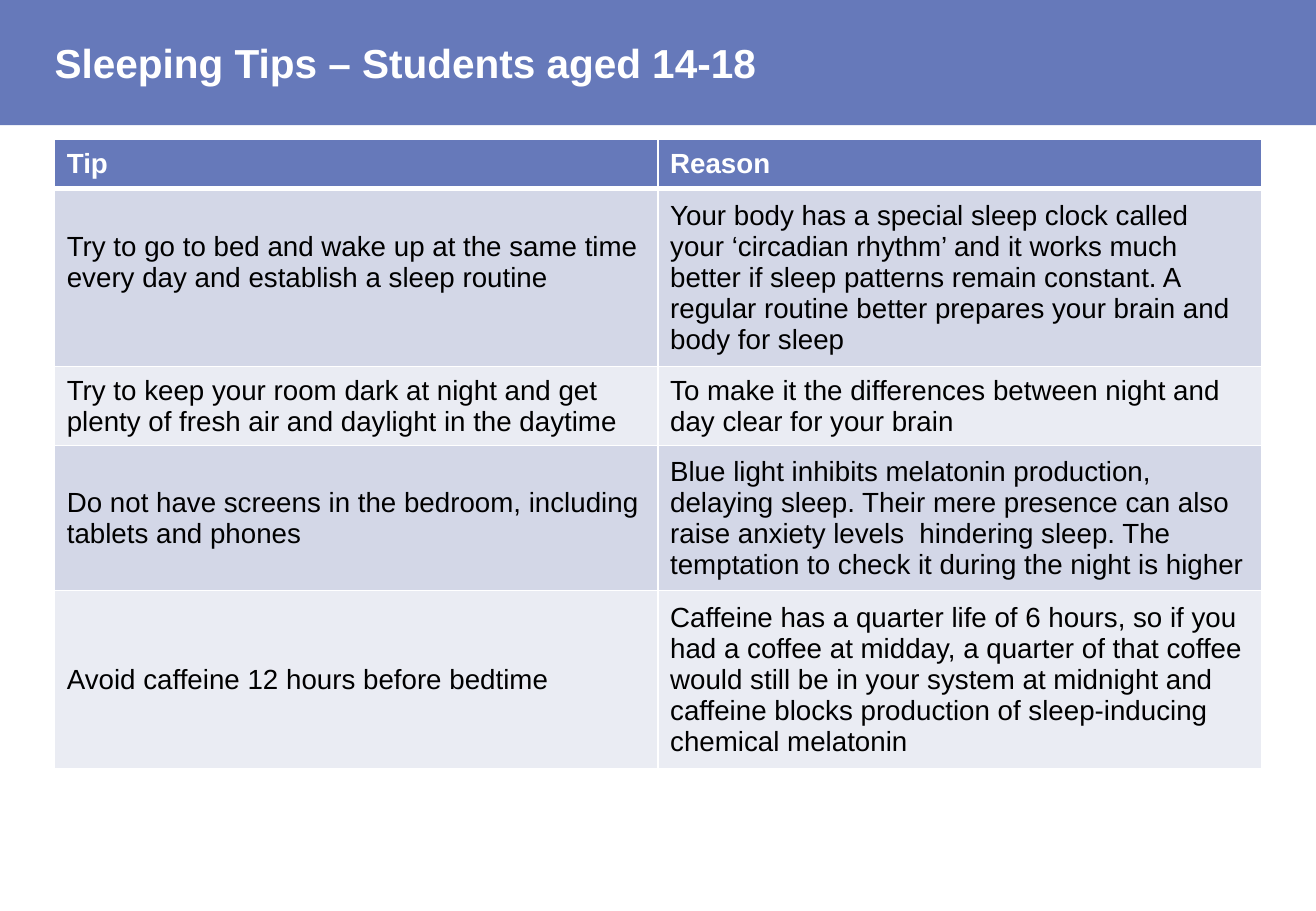
from dataclasses import dataclass

from lxml import etree
from pptx import Presentation
from pptx import util as u
from pptx.dml.color import RGBColor
from pptx.enum import shapes, text
from pptx.oxml.ns import qn


@dataclass(frozen=True)
class Theme:
    font: str = "Arial"
    title: float = 24
    body: float = 16.4
    blue: str = "6679BA"
    white: str = "FFFFFF"
    ink: str = "000000"
    bands: tuple = ("D3D7E7", "EAECF3")
    rule: float = 1
    heavy: float = 3


T = Theme()
WIDE, HIGH = 10.83, 7.5
EDGE = 0.45
SPAN = WIDE - 2 * EDGE
BAR = 1.03
TOP = 1.15
ROWS = (0.4, 1.37, 0.62, 1.19, 1.37)
PAD, LIFT = 0.05, 0.3

TIPS = [
    ("Tip", "Reason"),
    ("Try to go to bed and wake up at the same time every day and establish a sleep routine",
     "Your body has a special sleep clock called your ‘circadian rhythm’ and it works much "
     "better if sleep patterns remain constant. A regular routine better prepares your brain "
     "and body for sleep"),
    ("Try to keep your room dark at night and get plenty of fresh air and daylight in the daytime",
     "To make it the differences between night and day clear for your brain"),
    ("Do not have screens in the bedroom, including tablets and phones",
     "Blue light inhibits melatonin production, delaying sleep. Their mere presence can also "
     "raise anxiety levels  hindering sleep. The temptation to check it during the night is higher"),
    ("Avoid caffeine 12 hours before bedtime",
     "Caffeine has a quarter life of 6 hours, so if you had a coffee at midday, a quarter of "
     "that coffee would still be in your system at midnight and caffeine blocks production of "
     "sleep-inducing chemical melatonin"),
]


def paint(item, color):
    item.fill.solid()
    item.fill.fore_color.rgb = RGBColor.from_string(color)


def write(frame, words, size=T.body, color=T.ink, bold=False):
    frame.word_wrap = True
    para = frame.paragraphs[0]
    para.alignment = text.PP_ALIGN.LEFT
    run = para.add_run()
    run.text = words
    font = run.font
    font.name, font.size, font.bold = T.font, u.Pt(size), bold
    font.color.rgb = RGBColor.from_string(color)


def border(cell, top, bottom):
    props = cell._tc.get_or_add_tcPr()
    sides = {"lnL": T.rule, "lnR": T.rule, "lnT": top, "lnB": bottom}
    for spot, (side, width) in enumerate(sides.items()):
        line = etree.Element(qn(f"a:{side}"), w=str(u.Pt(width)))
        fill = etree.SubElement(line, qn("a:solidFill"))
        etree.SubElement(fill, qn("a:srgbClr"), val=T.white)
        props.insert(spot, line)


def add_bar(slide):
    bar = slide.shapes.add_shape(
        shapes.MSO_SHAPE.RECTANGLE, 0, 0, u.Inches(WIDE), u.Inches(BAR))
    paint(bar, T.blue)
    bar.line.fill.background()
    bar.shadow.inherit = False


def add_title(slide, words):
    box = slide.shapes.add_textbox(
        u.Inches(EDGE), u.Inches(0.12), u.Inches(SPAN), u.Inches(0.79))
    frame = box.text_frame
    frame.margin_left = frame.margin_right = frame.margin_top = frame.margin_bottom = 0
    frame.vertical_anchor = text.MSO_ANCHOR.MIDDLE
    write(frame, words, size=T.title, color=T.white, bold=True)


def add_grid(slide, data):
    grid = slide.shapes.add_table(
        len(data), len(data[0]), u.Inches(EDGE), u.Inches(TOP),
        u.Inches(SPAN), u.Inches(sum(ROWS))).table
    grid.horz_banding = False
    for r, line in enumerate(data):
        grid.rows[r].height = u.Inches(ROWS[r])
        head = r == 0
        for c, words in enumerate(line):
            cell = grid.cell(r, c)
            cell.vertical_anchor = text.MSO_ANCHOR.MIDDLE
            # The first tip sits half a line above the middle
            cell.margin_bottom = u.Inches(LIFT if (r, c) == (1, 0) else PAD)
            paint(cell, T.blue if head else T.bands[(r - 1) % 2])
            border(cell, T.heavy if r == 1 else T.rule, T.heavy if head else T.rule)
            write(cell.text_frame, words, color=T.white if head else T.ink, bold=head)


def main():
    deck = Presentation()
    deck.slide_width, deck.slide_height = u.Inches(WIDE), u.Inches(HIGH)
    slide = deck.slides.add_slide(deck.slide_layouts[6])

    # Heading band
    add_bar(slide)
    add_title(slide, "Sleeping Tips – Students aged 14-18")

    # Tips and reasons
    add_grid(slide, TIPS)

    deck.save("out.pptx")


if __name__ == "__main__":
    main()
